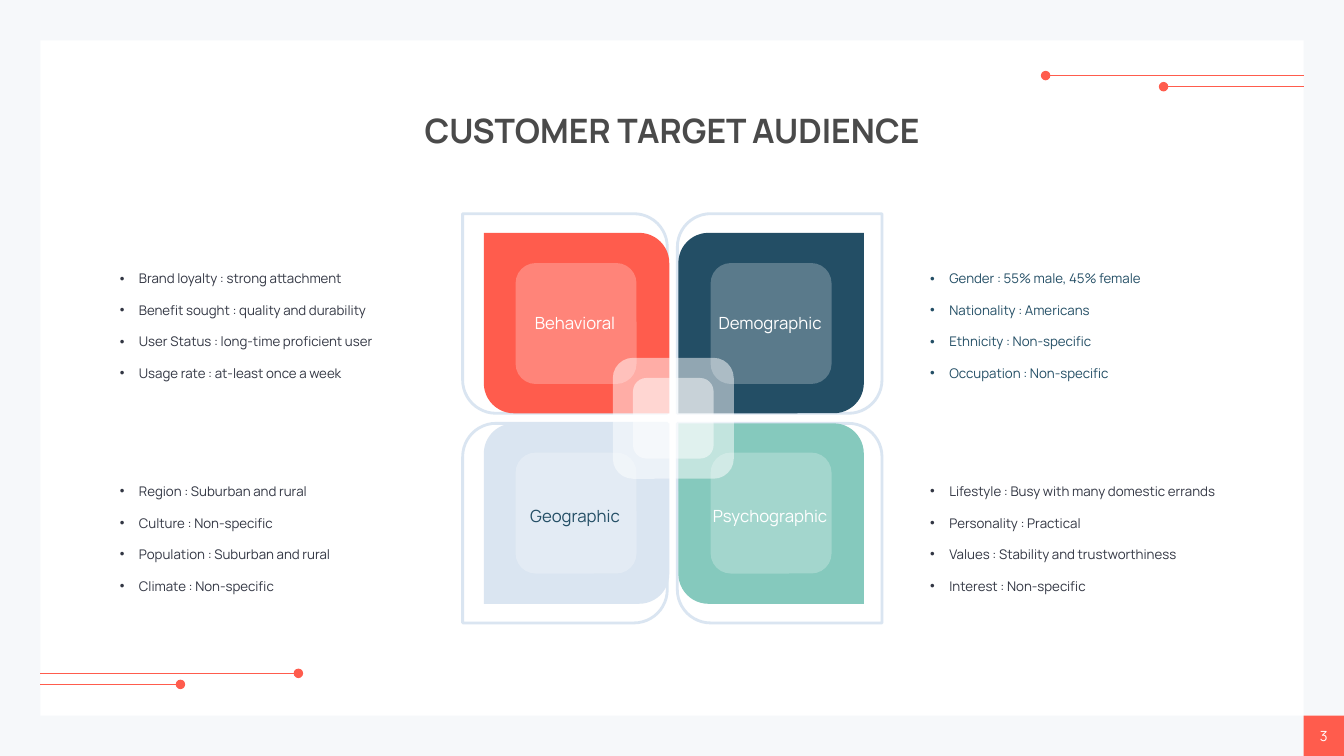
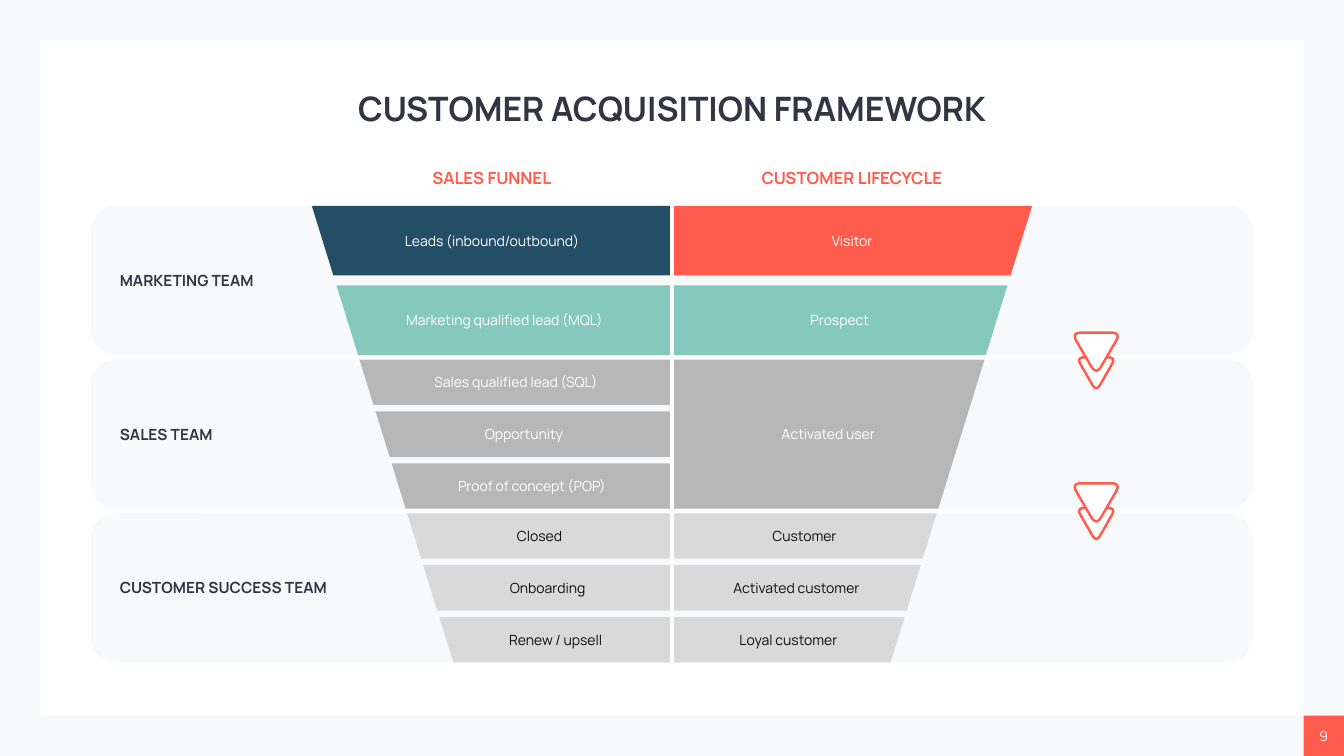
import collections

import lxml.etree
import pptx
import pptx.dml.color
import pptx.enum.shapes
import pptx.enum.text
import pptx.oxml.ns
import pptx.util

# Shared grid: square cells, 75 rows high and 133.33 columns wide
CELL = pptx.util.Inches(0.1)
COLS, ROWS = 133.33, 75
MARGIN = 4
CENTER = COLS / 2

# Shared style
FONT = "Manrope"
CORAL, NAVY, MINT, ICE = "FF5C4D", "234E65", "85C9BD", "DAE5F1"
WHITE, INK, CHARCOAL, BLACK = "FFFFFF", "323643", "4A4A4A", "0E0E0E"
PAGE, BAND, GRAY, SILVER = "F6F8FA", "F7F9FB", "B7B7B7", "D9D9D9"
ROUND = 0.167
SHAPE = pptx.enum.shapes.MSO_SHAPE
STRAIGHT = pptx.enum.shapes.MSO_CONNECTOR.STRAIGHT
ALIGN = pptx.enum.text.PP_ALIGN
ANCHOR = pptx.enum.text.MSO_ANCHOR
qn = pptx.oxml.ns.qn


def paint(fill, tone, opacity=100):
    """Fill a shape, line, font or background with a hex colour, or with none."""
    if tone is None:
        fill.background()
        return
    fill.solid()
    fill.fore_color.rgb = pptx.dml.color.RGBColor.from_string(tone)
    if opacity < 100:
        color = fill._xPr.find(qn("a:solidFill"))[0]
        lxml.etree.SubElement(color, qn("a:alpha"), val=str(opacity * 1000))


def add_part(canvas, kind, box, fill=None, opacity=100, outline=None, weight=1,
             corners=(), lines=(), size=10, tone=WHITE, bold=False,
             align=ALIGN.CENTER, anchor=ANCHOR.MIDDLE, spacing=None, bullets=False):
    """Add a part at box, in cells; a polygon's box is its list of points."""
    # Outline of the part
    if kind == "polygon":
        points = [(round(x * CELL), round(y * CELL)) for x, y in box]
        builder = canvas.build_freeform(*points[0])
        builder.add_line_segments(points[1:], close=True)
        part = builder.convert_to_shape()
    else:
        place = [round(value * CELL) for value in box]
        if kind == "title":
            part = canvas.title
            part.left, part.top, part.width, part.height = place
        elif kind == "text":
            part = canvas.add_textbox(*place)
        else:
            part = canvas.add_shape(kind, *place)
    for index, corner in enumerate(corners):
        part.adjustments[index] = corner

    # Fill and line
    part.shadow.inherit = False
    paint(part.fill, fill, opacity)
    paint(part.line.fill, outline)
    if outline:
        part.line.width = pptx.util.Pt(weight)

    # Text, one paragraph a line
    frame = part.text_frame
    frame.word_wrap = True
    frame.auto_size = pptx.enum.text.MSO_AUTO_SIZE.NONE
    frame.vertical_anchor = anchor
    for index, line in enumerate(lines):
        paragraph = frame.add_paragraph() if index else frame.paragraphs[0]
        paragraph.alignment = align
        if spacing:
            paragraph.line_spacing = spacing
        if bullets:
            indent = pptx.util.Inches(0.19)
            props = paragraph._p.get_or_add_pPr()
            props.set("marL", str(indent))
            props.set("indent", str(-indent))
            lxml.etree.SubElement(props, qn("a:buFont"), typeface="Arial")
            lxml.etree.SubElement(props, qn("a:buChar"), char="•")
        run = paragraph.add_run()
        run.text = line
        run.font.name, run.font.size, run.font.bold = FONT, pptx.util.Pt(size), bold
        paint(run.font.fill, tone)
    return part


# Both slides: background, white panel, title and page number
deck = pptx.Presentation()
deck.slide_width, deck.slide_height = pptx.util.Inches(13.333), ROWS * CELL
paint(deck.slide_master.background.fill, PAGE)
title_only = deck.slide_layouts[5]
canvases = []
for heading, page_number, title_top, title_tone in (
        ("CUSTOMER TARGET AUDIENCE", "3", 10.3, CHARCOAL),
        ("CUSTOMER ACQUISITION FRAMEWORK", "9", 8.1, INK)):
    canvas = deck.slides.add_slide(title_only).shapes
    title = add_part(canvas, "title", (CENTER - 46.3, title_top, 92.6, 5.2),
                     lines=[heading], size=24, tone=title_tone, bold=True)
    panel = add_part(canvas, SHAPE.RECTANGLE,
                     (MARGIN, MARGIN, COLS - 2 * MARGIN, ROWS - 2 * MARGIN), WHITE)
    title.element.addprevious(panel.element)  # the panel lies behind the title
    add_part(canvas, SHAPE.RECTANGLE, (COLS - MARGIN, ROWS - MARGIN, MARGIN, MARGIN),
             CORAL, lines=[page_number])
    canvases.append(canvas)
audience, acquisition = canvases

# Slide 1: dotted lines growing inwards from the panel's right and left edges
DOT = 0.8
for edge, direction, first_row in ((COLS - MARGIN, -1, 7.5), (MARGIN, 1, 66.8)):
    for reach, drop in ((13.9, 1.1), (25.6, 0)):
        tip, row = edge + direction * reach, first_row + drop
        stem = audience.add_connector(STRAIGHT, *(
            round(value * CELL) for value in (edge, row, tip, row)))
        paint(stem.line.fill, CORAL)
        stem.line.width = pptx.util.Pt(0.75)
        add_part(audience, SHAPE.OVAL, (tip - DOT / 2, row - DOT / 2, DOT, DOT), CORAL,
                 outline=CORAL)

# Slide 1: where each part of a segment starts, across and down
Start = collections.namedtuple("Start", "frame tile square label facts")
WEST = Start(frame=45.9, tile=48, square=51.15, label=49.8, facts=10.9)
EAST = Start(frame=67.2, tile=67.3, square=70.5, label=69.15, facts=91.3)
NORTH = Start(frame=21.2, tile=23.1, square=26.1, label=29.6, facts=24.8)
SOUTH = Start(frame=42, tile=42, square=44.9, label=48.8, facts=45.9)

# Slide 1: corner pairs of a leaf, (top left and bottom right, top right and bottom left)
FALLING, RISING = (ROUND, 0), (0, ROUND)

Segment = collections.namedtuple(
    "Segment", "across down name tile_tone name_tone facts_tone leaf facts")
segments = (
    Segment(WEST, NORTH, "Behavioral", CORAL, WHITE, INK, RISING, (
        "Brand loyalty : strong attachment",
        "Benefit sought : quality and durability",
        "User Status : long-time proficient user",
        "Usage rate : at-least once a week")),
    Segment(EAST, NORTH, "Demographic", NAVY, WHITE, NAVY, FALLING, (
        "Gender : 55% male, 45% female",
        "Nationality : Americans",
        "Ethnicity : Non-specific",
        "Occupation : Non-specific")),
    Segment(WEST, SOUTH, "Geographic", ICE, NAVY, INK, FALLING, (
        "Region : Suburban and rural",
        "Culture : Non-specific",
        "Population : Suburban and rural",
        "Climate : Non-specific")),
    Segment(EAST, SOUTH, "Psychographic", MINT, WHITE, INK, RISING, (
        "Lifestyle : Busy with many domestic errands",
        "Personality : Practical",
        "Values : Stability and trustworthiness",
        "Interest : Non-specific")),
)

# Slide 1: frames and tiles, then the translucent centre, then squares and text
for segment in segments:
    across, down = segment.across, segment.down
    add_part(audience, SHAPE.ROUND_2_DIAG_RECTANGLE,
             (across.frame, down.frame, 20.3, 19.8), outline=ICE, weight=2,
             corners=segment.leaf)
    add_part(audience, SHAPE.ROUND_2_DIAG_RECTANGLE,
             (across.tile, down.tile, 18.4, 17.9), segment.tile_tone,
             corners=segment.leaf)
for left, top, side in ((60.8, 35.5, 12), (62.8, 37.5, 8)):
    add_part(audience, SHAPE.ROUNDED_RECTANGLE, (left, top, side, side), WHITE, 50,
             corners=[ROUND])
for segment in segments:
    across, down = segment.across, segment.down
    add_part(audience, SHAPE.ROUNDED_RECTANGLE, (across.square, down.square, 12, 12),
             WHITE, 25, corners=[ROUND])
    add_part(audience, "text", (across.label, down.label, 14.5, 3.8),
             lines=[segment.name], size=12, tone=segment.name_tone, spacing=1.5)
    add_part(audience, "text", (across.facts, down.facts, 35, 11.3),
             lines=segment.facts, size=9.5, tone=segment.facts_tone, align=ALIGN.LEFT,
             anchor=ANCHOR.TOP, spacing=1.98, bullets=True)

# Slide 2: team bands
FUNNEL_TOP, BAND_STEP, BAND_HEIGHT = 20.42, 15.25, 14.8
band_tops = [FUNNEL_TOP + BAND_STEP * index for index in range(3)]
for top, team in zip(band_tops, ("MARKETING TEAM", "SALES TEAM", "CUSTOMER SUCCESS TEAM")):
    add_part(acquisition, SHAPE.ROUNDED_RECTANGLE, (9.05, top, 115.2, BAND_HEIGHT), BAND,
             corners=[ROUND])
    add_part(acquisition, "text", (10.9, top + 5.9, 26, 3), lines=[team], size=11,
             tone=INK, bold=True, align=ALIGN.LEFT)

# Slide 2: funnel stages by side, band and row, as (name, fill, text tone)
FUNNEL_HALF, TAPER = 35.73, 0.31
FUNNEL_SIDE, LIFECYCLE_SIDE = -1, 1
halves = (
    (FUNNEL_SIDE, "SALES FUNNEL", (
        (("Leads (inbound/outbound)", NAVY, WHITE),
         ("Marketing qualified lead (MQL)", MINT, WHITE)),
        (("Sales qualified lead (SQL)", GRAY, WHITE),
         ("Opportunity", GRAY, WHITE),
         ("Proof of concept (POP)", GRAY, WHITE)),
        (("Closed", SILVER, BLACK),
         ("Onboarding", SILVER, BLACK),
         ("Renew / upsell", SILVER, BLACK)))),
    (LIFECYCLE_SIDE, "CUSTOMER LIFECYCLE", (
        (("Visitor", CORAL, WHITE),
         ("Prospect", MINT, WHITE)),
        (("Activated user", GRAY, WHITE),),
        (("Customer", SILVER, BLACK),
         ("Activated customer", SILVER, BLACK),
         ("Loyal customer", SILVER, BLACK)))),
)
row_gaps = (1, 0.65, 0.65)
for side, heading, bands in halves:
    add_part(acquisition, "text", (CENTER + side * FUNNEL_HALF / 2 - 13, 16.1, 26, 3),
             lines=[heading], size=12, tone=CORAL, bold=True)
    for band_top, gap, stages in zip(band_tops, row_gaps, bands):
        pitch = (BAND_HEIGHT + gap) / len(stages)
        for row, (stage, fill, tone) in enumerate(stages):
            top = band_top + row * pitch
            bottom = top + pitch - gap
            outer_top, outer_bottom = (
                CENTER + side * (FUNNEL_HALF - TAPER * (y - FUNNEL_TOP))
                for y in (top, bottom))
            add_part(acquisition, "polygon",
                     [(CENTER, top), (outer_top, top), (outer_bottom, bottom),
                      (CENTER, bottom)],
                     fill, lines=[stage], tone=tone)

# Slide 2: white divider between the halves
divider = acquisition.add_connector(STRAIGHT, *(
    round(value * CELL) for value in (CENTER, 17.8, CENTER, 69.2)))
paint(divider.line.fill, WHITE)
divider.line.width = pptx.util.Pt(2.25)

# Slide 2: pairs of triangles pointing down, each tip rounded by a quadratic curve
# that leaves and meets the sides at the share CUT of their length
ARROW_CENTER, CUT, CURVE_STEPS = 108.75, 0.2, 6
for pair_top in (33, 47.95):
    for top, half, height in ((pair_top + 2.45, 1.95, 3.4), (pair_top, 2.45, 4.2)):
        tips = [(ARROW_CENTER - half, top), (ARROW_CENTER + half, top),
                (ARROW_CENTER, top + height)]
        contour = []
        for index, tip in enumerate(tips):
            previous_tip, next_tip = tips[index - 1], tips[(index + 1) % 3]
            for step in range(CURVE_STEPS + 1):
                t = step / CURVE_STEPS
                pull_back, pull_on = CUT * (1 - t) ** 2, CUT * t ** 2
                contour.append([
                    here + pull_back * (back - here) + pull_on * (on - here)
                    for here, back, on in zip(tip, previous_tip, next_tip)])
        add_part(acquisition, "polygon", contour, WHITE, outline=CORAL, weight=1.75)

# Connectors carry no shadow
for canvas in canvases:
    for part in canvas:
        if part.shape_type == pptx.enum.shapes.MSO_SHAPE_TYPE.LINE:
            lxml.etree.SubElement(part.element.spPr, qn("a:effectLst"))

deck.save("out.pptx")
